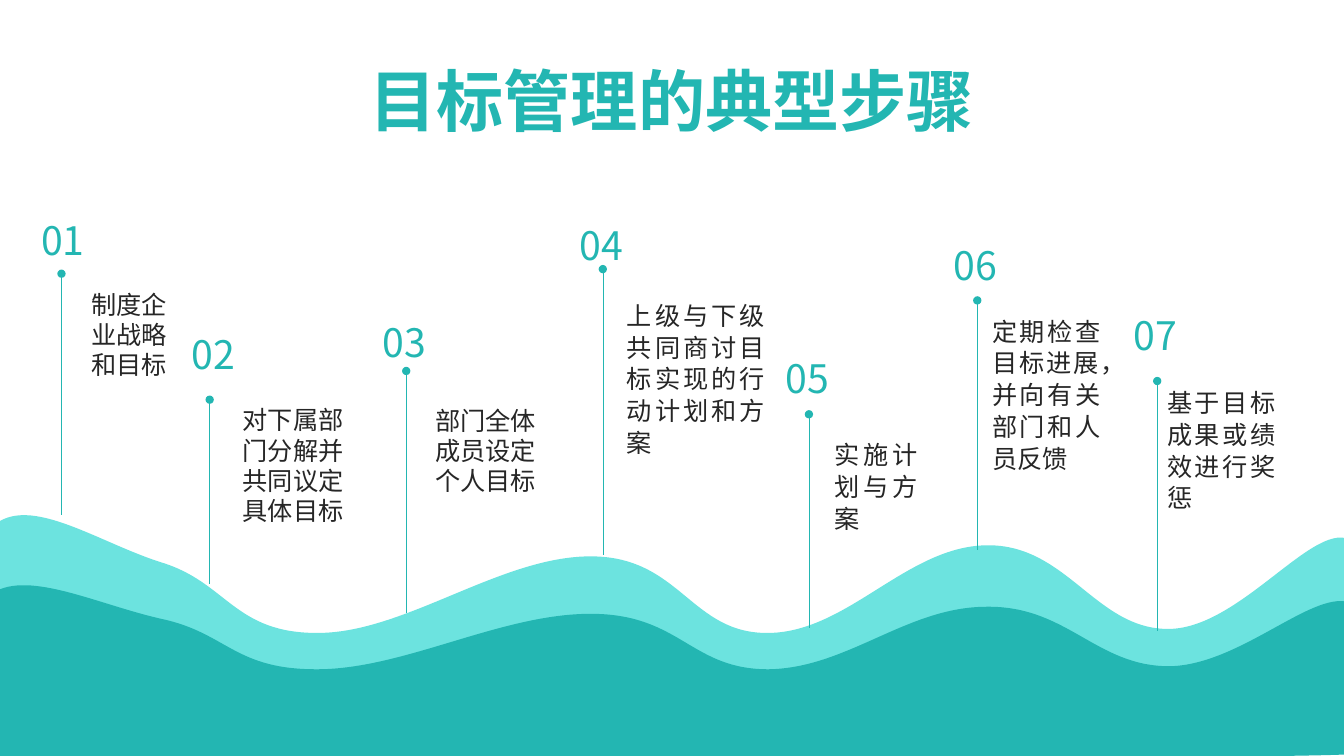
from dataclasses import dataclass

from lxml import etree
from pptx import Presentation
from pptx import util as u
from pptx.dml.color import RGBColor
from pptx.enum import lang, shapes, text
from pptx.oxml.ns import qn


@dataclass(frozen=True)
class Theme:
    teal: RGBColor = RGBColor(0x23, 0xB6, 0xB2)
    aqua: RGBColor = RGBColor(0x6C, 0xE3, 0xDF)
    ink: RGBColor = RGBColor(0x26, 0x26, 0x26)
    title_font: str = "Arial"
    body_font: str = "Noto Sans CJK SC"
    title_size: int = 48
    number_size: int = 28
    body_size: int = 18
    pin_width: float = 0.25


THEME = Theme()
CELL = u.Inches(0.1)  # one column or row of the grid
COLUMNS, ROWS = 133.33, 75

# Bezier columns shared by both waves, with the rows of each wave:
# the crest line first, then the right, bottom and left sides
WAVE_COLUMNS = (-1.1, 2.4, 9.4, 16, 22.6, 23.2, 31.7, 40.3, 49.7, 58.6, 67.6,
                68.5, 76.4, 84.2, 90, 97.9, 105.9, 108.7, 116, 123.2, 130.6, 134.2,
                134.1, 134.3, 134.4, 126.8, 9.9, -1.2, -1.2, -1.4, -1.1)
BACK_ROWS = (52.6, 48.6, 53.7, 55.8, 57.8, 62.9, 62.8, 62.7, 55.2, 55.2, 55.2,
             63, 62.8, 62.6, 54.2, 54.1, 54, 62.5, 62.4, 62.3, 51.2, 53.7,
             60.9, 67.3, 74.7, 75.6, 74.8, 75.1, 56.5, 66.4, 52.6)
FRONT_ROWS = (59.1, 56.3, 59.9, 61.4, 62.8, 66.5, 66.4, 66.3, 60.9, 60.9, 60.9,
              66.5, 66.4, 66.2, 60.2, 60.2, 60.1, 66.1, 66.1, 66, 58.1, 59.9,
              65, 69.6, 74.8, 75.5, 74.9, 75.1, 61.9, 68.9, 59.1)
WAVE_LEFT, WAVE_RIGHT, WAVE_BOTTOM = -1.3, 134.4, 75.1

# Pin (column, top, bottom), number (column, row), text (column, row, width, height),
# whether the text is justified, wording
STEPS = (
    ((6.1, 27.15, 51.1), (3.1, 21), (8.1, 28.2, 10.6, 10.1), False, "制度企业战略和目标"),
    ((20.8, 39.65, 57.9), (18, 32.3), (23.1, 39.65, 12.7, 13.1), False,
     "对下属部门分解并共同议定具体目标"),
    ((40.3, 36.8, 60.8), (37, 31.1), (42.2, 39.7, 12.7, 10.1), False, "部门全体成员设定个人目标"),
    ((59.8, 26.7, 55.1), (56.5, 21.5), (61.2, 29.15, 15.7, 16.9), True,
     "上级与下级共同商讨目标实现的行动计划和方案"),
    ((80.25, 41.1, 62.3), (76.95, 34.65), (81.8, 42.95, 10.2, 10.5), True, "实施计划与方案"),
    ((96.95, 29.8, 54.6), (93.65, 23.45), (97.45, 30.7, 12.7, 16.9), True,
     "定期检查目标进展，并向有关部门和人员反馈"),
    ((114.8, 37.8, 62.6), (111.5, 30.4), (114.8, 37.8, 12.7, 13.7), True,
     "基于目标成果或绩效进行奖惩"),
)


def grid(*cells):
    return [u.Emu(round(cell * CELL)) for cell in cells]


def write(shape, wording, font, size, color, bold=False):
    """Fill a shape with one formatted paragraph and return it."""
    frame = shape.text_frame
    frame.word_wrap = True
    frame.auto_size = text.MSO_AUTO_SIZE.SHAPE_TO_FIT_TEXT
    paragraph = frame.paragraphs[0]
    paragraph.text = wording
    paragraph.font.name = font
    paragraph.font.size = u.Pt(size)
    paragraph.font.bold = bold
    paragraph.font.color.rgb = color
    paragraph.font.language_id = lang.MSO_LANGUAGE_ID.SIMPLIFIED_CHINESE
    # East Asian typeface
    defaults = paragraph._p.pPr.find(qn("a:defRPr"))
    etree.SubElement(defaults, qn("a:ea"), typeface=THEME.body_font)
    return paragraph


def add_title(slide, wording):
    title = slide.shapes.title
    title.left, title.top, title.width, title.height = grid(34.1, 5.35, 65.1, 9.1)
    paragraph = write(title, wording, THEME.title_font, THEME.title_size, THEME.teal, True)
    paragraph.alignment = text.PP_ALIGN.CENTER


def add_wave(slide, top, rows, color):
    # The frame of the wave, as a plain outline
    corners = [grid(*corner) for corner in (
        (WAVE_LEFT, top), (WAVE_RIGHT, top), (WAVE_RIGHT, WAVE_BOTTOM), (WAVE_LEFT, WAVE_BOTTOM))]
    builder = slide.shapes.build_freeform(*corners[0])
    builder.add_line_segments(corners[1:])
    wave = builder.convert_to_shape()

    # Cubic curves in place of the straight sides
    outline = wave._element.find(".//" + qn("a:path"))
    for side in outline.findall(qn("a:lnTo")):
        outline.remove(side)
    points = [grid(column - WAVE_LEFT, row - top) for column, row in zip(WAVE_COLUMNS, rows)]
    start = outline.find(qn("a:moveTo")).find(qn("a:pt"))
    start.set("x", str(points[0][0]))
    start.set("y", str(points[0][1]))
    close = outline.find(qn("a:close"))
    for first in range(1, len(points), 3):
        curve = etree.Element(qn("a:cubicBezTo"))
        for x, y in points[first:first + 3]:
            etree.SubElement(curve, qn("a:pt"), x=str(x), y=str(y))
        close.addprevious(curve)

    wave.shadow.inherit = False
    wave.fill.solid()
    wave.fill.fore_color.rgb = color
    wave.line.fill.background()


def add_pin(slide, column, top, bottom):
    pin = slide.shapes.add_connector(
        shapes.MSO_CONNECTOR.STRAIGHT, *grid(column, top, column, bottom))
    pin.line.color.rgb = THEME.teal
    pin.line.width = u.Pt(THEME.pin_width)
    # Round head, no shadow
    etree.SubElement(pin.line._get_or_add_ln(), qn("a:headEnd"), type="oval")
    etree.SubElement(pin._element.spPr, qn("a:effectLst"))


def add_step(slide, number, pin, number_at, text_box, justified, wording):
    add_pin(slide, *pin)
    label = slide.shapes.add_textbox(*grid(*number_at, 6.6, 5.7))
    write(label, f"{number:02}", THEME.body_font, THEME.number_size, THEME.teal)
    body = slide.shapes.add_textbox(*grid(*text_box))
    paragraph = write(body, wording, THEME.body_font, THEME.body_size, THEME.ink)
    if justified:
        paragraph.alignment = text.PP_ALIGN.JUSTIFY
        paragraph.line_spacing = 1.05


def main():
    presentation = Presentation()
    presentation.slide_width, presentation.slide_height = grid(COLUMNS, ROWS)
    slide = presentation.slides.add_slide(presentation.slide_layouts[5])  # title only

    add_title(slide, "目标管理的典型步骤")

    # Waves, back to front
    add_wave(slide, 51.1, BACK_ROWS, THEME.aqua)
    add_wave(slide, 58.1, FRONT_ROWS, THEME.teal)

    # Numbered steps
    for number, step in enumerate(STEPS, start=1):
        add_step(slide, number, *step)

    presentation.save("out.pptx")


if __name__ == "__main__":
    main()
